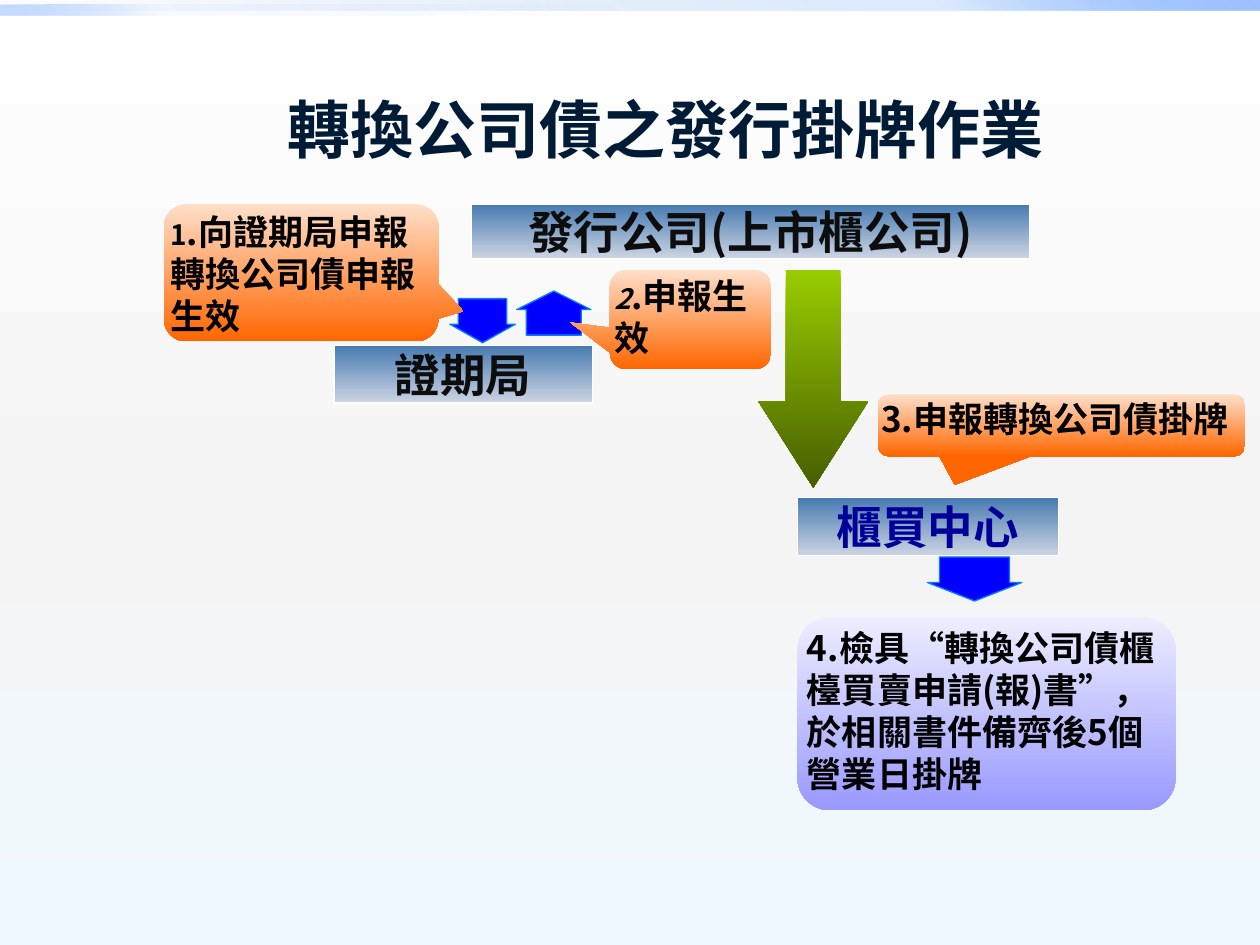
"""Build the slide on how convertible bonds are issued and listed."""
from lxml import etree
from pptx import Presentation
from pptx.dml.color import RGBColor
from pptx.enum.shapes import MSO_SHAPE
from pptx.enum.text import MSO_ANCHOR, PP_ALIGN
from pptx.oxml.ns import qn
from pptx.util import Inches, Pt

RECTANGLE = MSO_SHAPE.RECTANGLE
ROUNDED = MSO_SHAPE.ROUNDED_RECTANGLE
CALLOUT = MSO_SHAPE.ROUNDED_RECTANGULAR_CALLOUT
DOWN_ARROW = MSO_SHAPE.DOWN_ARROW
MIDDLE, TOP = MSO_ANCHOR.MIDDLE, MSO_ANCHOR.TOP
CENTER, LEFT = PP_ALIGN.CENTER, PP_ALIGN.LEFT

FONT = "Noto Sans CJK SC"
STEEL = [(0, "477AB1", 100), (100, "CCD4E2", 100)]
ORANGE = [(0, "FFDFC9", 100), (100, "FF6600", 100)]
LILAC = [(0, "EDEDFF", 100), (100, "9999FF", 100)]
GREEN = [(0, "99CC00", 100), (100, "475E00", 100)]
PAPER = [(0, "FFFFFF", 100), (55, "F4F4F4", 100), (100, "EEF9FF", 100)]
TOP_BAND = [(0, "0058B7", 0), (75, "4F95FF", 20), (100, "9EC2FF", 100)]
LEFT_BAND = [(0, "0058B7", 0), (75, "4F95FF", 5), (100, "9EC2FF", 60)]


def paint(fill, element, stops, angle=90):
    """Fill with a linear gradient of (position, colour, opacity) stops."""
    fill.gradient()
    gradient = element.find(".//" + qn("a:gradFill"))
    gradient.find(qn("a:lin")).set("ang", str(angle * 60000))
    stop_list = gradient.find(qn("a:gsLst"))
    for stop in list(stop_list):
        stop_list.remove(stop)
    for position, colour, opacity in stops:
        stop = etree.SubElement(stop_list, qn("a:gs"), pos=str(position * 1000))
        tint = etree.SubElement(stop, qn("a:srgbClr"), val=colour)
        if opacity < 100:
            etree.SubElement(tint, qn("a:alpha"), val=str(opacity * 1000))


def write(shape, lines, size, colour, align, anchor, inset=0):
    """Write lines of text, each with an optional small leading number."""
    frame = shape.text_frame
    frame.word_wrap = True
    frame.vertical_anchor = anchor
    frame.margin_left = frame.margin_right = Inches(inset)
    frame.margin_top = frame.margin_bottom = Inches(inset / 2)
    for index, (number, text, italic) in enumerate(lines):
        para = frame.add_paragraph() if index else frame.paragraphs[0]
        para.alignment = align
        para.font.name = FONT
        para.font.size = Pt(size)
        para.font.bold = True
        para.font.color.rgb = RGBColor.from_string(colour)
        defaults = para._p.pPr.find(qn("a:defRPr"))
        etree.SubElement(defaults, qn("a:ea"), typeface=FONT)
        if number:
            span = para.add_run()
            span.text = number
            span.font.size = Pt(16)
            span.font.italic = italic
        para.add_run().text = text


deck = Presentation()
deck.slide_width, deck.slide_height = Inches(10), Inches(7.5)
page = deck.slides.add_slide(deck.slide_layouts[6])
paint(page.background.fill, page._element, PAPER)

title = page.shapes.add_textbox(Inches(1.02), Inches(0.39), Inches(8.52), Inches(1.25))
write(title, [("", "轉換公司債之發行掛牌作業", False)], 36, "001B36", CENTER, MIDDLE, 0.1)

# kind, position, adjustments, gradient, angle
bands = [
    (RECTANGLE, (0, 0, 10, 0.08), [], TOP_BAND, 315),
    (RECTANGLE, (0, 0.04, 5, 0.08), [], LEFT_BAND, 135),
]
notes = [
    (CALLOUT, (1.3, 1.62, 2.18, 1.09), [0.591, 0.279, 0.167], ORANGE,
     [("1", ".向證期局申報", False), ("", "轉換公司債申報生效", False)]),
    (CALLOUT, (4.84, 2.14, 1.28, 0.79), [-0.745, 0.031, 0.167], ORANGE,
     [("2", ".申報生效", True)]),
    (CALLOUT, (6.97, 3.13, 2.91, 0.49), [-0.291, 0.965, 0.167], ORANGE,
     [("", "3.申報轉換公司債掛牌", False)]),
    (ROUNDED, (6.33, 4.9, 3, 1.53), [0.167], LILAC,
     [("", "4.檢具“轉換公司債櫃檯買賣申請(報)書”，於相關書件備齊後5個營業日掛牌", False)]),
]
parties = [
    ((3.74, 1.62, 4.43, 0.43), "發行公司(上市櫃公司)", "0D0D0D"),
    ((2.65, 2.74, 2.05, 0.46), "證期局", "0D0D0D"),
    ((6.33, 3.95, 2.07, 0.46), "櫃買中心", "000099"),
]
blue_arrows = [
    ((3.57, 2.37, 0.52, 0.35), 0),
    ((4.1, 2.31, 0.59, 0.35), 180),
    ((7.36, 4.42, 0.75, 0.35), 0),
]

for kind, place, adjustments, stops, angle in bands + [
    (DOWN_ARROW, (6.02, 2.14, 0.87, 1.73), [0.5, 0.784], GREEN, 90)
]:
    shape = page.shapes.add_shape(kind, *map(Inches, place))
    shape.shadow.inherit = False
    shape.line.fill.background()
    for index, value in enumerate(adjustments):
        shape.adjustments[index] = value
    paint(shape.fill, shape._element, stops, angle)

for place, name, colour in parties:
    box = page.shapes.add_shape(RECTANGLE, *map(Inches, place))
    box.shadow.inherit = False
    box.line.color.rgb = RGBColor.from_string("FFFFFF")
    box.line.width = Pt(0.75)
    paint(box.fill, box._element, STEEL)
    write(box, [("", name, False)], 26, colour, CENTER, MIDDLE)

for place, turn in blue_arrows:
    arrow = page.shapes.add_shape(DOWN_ARROW, *map(Inches, place))
    arrow.shadow.inherit = False
    arrow.rotation = turn
    arrow.adjustments[0], arrow.adjustments[1] = 0.74, 0.42
    arrow.fill.solid()
    arrow.fill.fore_color.rgb = RGBColor.from_string("0000FF")
    arrow.line.color.rgb = RGBColor.from_string("0080FF")
    arrow.line.width = Pt(0.75)

for kind, place, adjustments, stops, lines in notes:
    note = page.shapes.add_shape(kind, *map(Inches, place))
    note.shadow.inherit = False
    note.line.fill.background()
    for index, value in enumerate(adjustments):
        note.adjustments[index] = value
    paint(note.fill, note._element, stops)
    write(note, lines, 20, "000000", LEFT, TOP)

deck.save("out.pptx")
